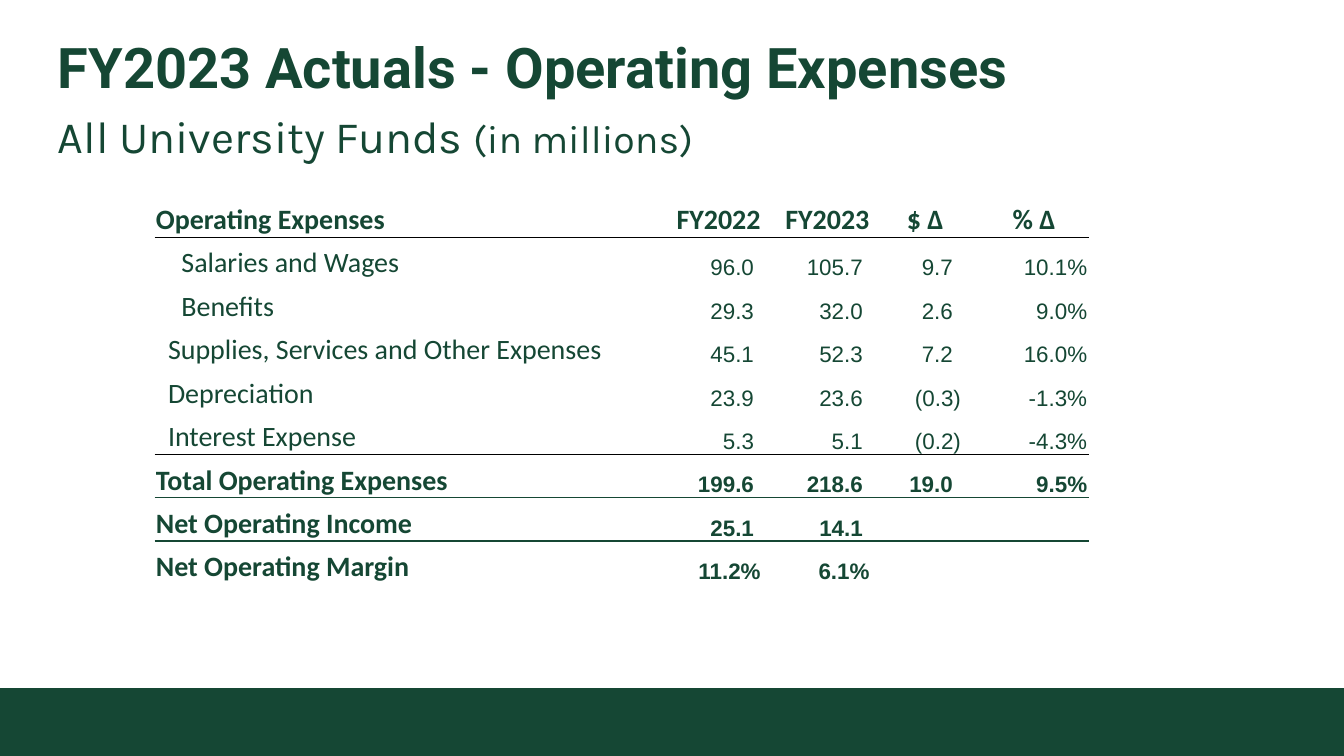
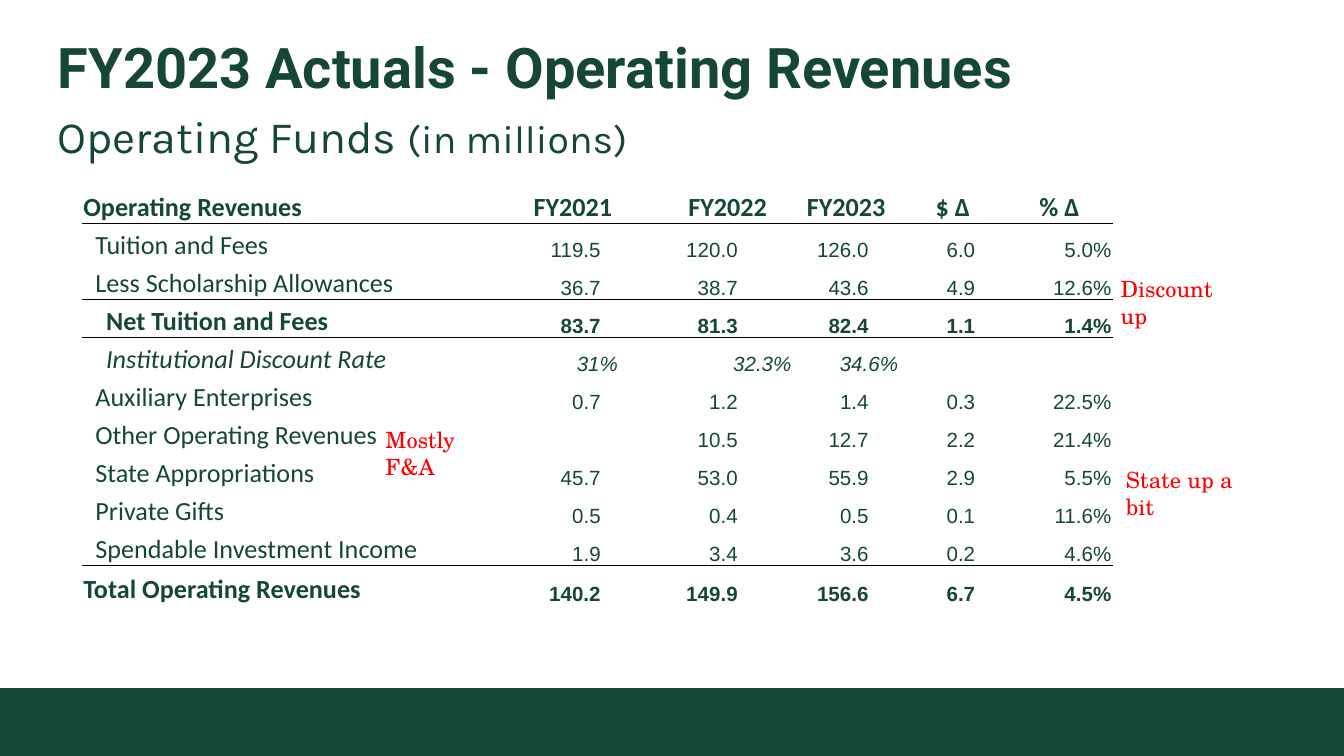
from dataclasses import dataclass

from lxml.etree import SubElement
from pptx import Presentation
from pptx.dml.color import RGBColor
from pptx.enum.shapes import MSO_SHAPE as Shape
from pptx.enum.text import MSO_ANCHOR as Anchor, MSO_AUTO_SIZE as AutoSize, PP_ALIGN as Align
from pptx.oxml.ns import qn
from pptx.util import Inches, Pt


@dataclass(frozen=True)
class Theme:
    green: str = "154734"
    black: str = "000000"
    red: str = "FF0000"
    title_font: str = "Roboto"
    subtitle_font: str = "Karla"
    label_font: str = "Calibri"
    value_font: str = "Arial"
    note_font: str = "TeX Gyre Schola"
    title_size: int = 30
    subtitle_size: int = 24
    unit_size: int = 21
    note_size: int = 12
    cell_pad: float = 0.01
    bracket: float = 0.06
    no_table_style: str = "{2D5ABB26-0587-4C30-8999-92F81FD0307C}"


theme = Theme()
THIN = (theme.black, 0.5)
GREEN = (theme.green, 1)
CHANGE_WIDTH = 2.38 / 3

# columns: width, heading alignment, space to the right of a plain number
# rows: label, label indent, style, values
# rules: row number -> line below that row
statements = [
    dict(
        title="FY2023 Actuals - Operating Expenses",
        funds="All University Funds ",
        at=(1.15, 1.44),
        sizes=(15, 12),
        headings=["Operating Expenses", "FY2022", "FY2023", "$ ∆", "% ∆"],
        columns=[(3.71, Align.LEFT, 0), (0.81, Align.RIGHT, 0.06), (0.81, Align.RIGHT, 0.06),
                 (0.81, Align.CENTER, 0.2), (0.81, Align.CENTER, 0.01)],
        heights=[2.91 / 9] * 9,
        rows=[
            ("Salaries and Wages", 0.2, "", ["96.0", "105.7", "9.7", "10.1%"]),
            ("Benefits", 0.2, "", ["29.3", "32.0", "2.6", "9.0%"]),
            ("Supplies, Services and Other Expenses", 0.1, "", ["45.1", "52.3", "7.2", "16.0%"]),
            ("Depreciation", 0.1, "", ["23.9", "23.6", "(0.3)", "-1.3%"]),
            ("Interest Expense", 0.1, "", ["5.3", "5.1", "(0.2)", "-4.3%"]),
            ("Total Operating Expenses", 0.01, "bold", ["199.6", "218.6", "19.0", "9.5%"]),
            ("Net Operating Income", 0.01, "bold", ["25.1", "14.1", "", ""]),
            ("Net Operating Margin", 0.01, "bold", ["11.2%", "6.1%", "", ""]),
        ],
        rules={0: THIN, 5: THIN, 6: GREEN, 7: GREEN},
        notes=[],
    ),
    dict(
        title="FY2023 Actuals - Operating Revenues",
        funds="Operating Funds ",
        at=(0.61, 1.38),
        sizes=(14, 11),
        headings=["Operating Revenues", "FY2021", "FY2022", "FY2023", "$ ∆", "% ∆"],
        columns=[(3.35, Align.LEFT, 0), (0.97, Align.LEFT, 0.46), (0.97, Align.CENTER, 0.41),
                 (CHANGE_WIDTH, Align.CENTER, 0.23), (CHANGE_WIDTH, Align.CENTER, 0.23),
                 (CHANGE_WIDTH, Align.CENTER, 0.01)],
        heights=[2.83 / 10] * 10 + [0.3],
        rows=[
            ("Tuition and Fees", 0.1, "", ["119.5", "120.0", "126.0", "6.0", "5.0%"]),
            ("Less Scholarship Allowances", 0.1, "", ["36.7", "38.7", "43.6", "4.9", "12.6%"]),
            ("Net Tuition and Fees", 0.18, "bold", ["83.7", "81.3", "82.4", "1.1", "1.4%"]),
            ("Institutional Discount Rate", 0.18, "italic", ["31%", "32.3%", "34.6%", "", ""]),
            ("Auxiliary Enterprises", 0.1, "", ["0.7", "1.2", "1.4", "0.3", "22.5%"]),
            ("Other Operating Revenues", 0.1, "", ["", "10.5", "12.7", "2.2", "21.4%"]),
            ("State Appropriations", 0.1, "", ["45.7", "53.0", "55.9", "2.9", "5.5%"]),
            ("Private Gifts", 0.1, "", ["0.5", "0.4", "0.5", "0.1", "11.6%"]),
            ("Spendable Investment Income", 0.1, "", ["1.9", "3.4", "3.6", "0.2", "4.6%"]),
            ("Total Operating Revenues", 0.01, "bold", ["140.2", "149.9", "156.6", "6.7", "4.5%"]),
        ],
        rules={0: THIN, 2: THIN, 3: THIN, 9: THIN},
        notes=[("Discount up", 8.24, 2, 1.1), ("State up a bit", 8.28, 3.42, 1.17),
               ("Mostly F&A", 2.77, 3.12, 1.1)],
    ),
]


def set_font(paragraph, name, size, color, style=""):
    font = paragraph.font
    font.name, font.size = name, Pt(size)
    font.color.rgb = RGBColor.from_string(color)
    font.bold, font.italic = style == "bold", style == "italic"


def add_text(slide, left, top, width, height, pad=None):
    """Add a wrapping text box and return its frame; pad None keeps the default insets."""
    frame = slide.shapes.add_textbox(*map(Inches, (left, top, width, height))).text_frame
    frame.word_wrap = True
    if pad is not None:
        frame.margin_left = frame.margin_right = frame.margin_top = frame.margin_bottom = Inches(pad)
    return frame


deck = Presentation()
deck.slide_width, deck.slide_height = Inches(10), Inches(10 * 9 / 16)

for statement in statements:
    slide = deck.slides.add_slide(deck.slide_layouts[6])

    band = slide.shapes.add_shape(Shape.RECTANGLE, *map(Inches, (-0.04, 5.12, 10.04, 0.51)))
    band.shadow.inherit = False
    band.fill.solid()
    band.fill.fore_color.rgb = RGBColor.from_string(theme.green)
    band.line.fill.background()

    title = add_text(slide, 0.43, 0.3, 9.14, 0.44, pad=0).paragraphs[0]
    title.text = statement["title"]
    title.line_spacing = 0.9
    set_font(title, theme.title_font, theme.title_size, theme.green, "bold")

    subtitle = add_text(slide, 0.43, 0.81, 9.14, 0.34, pad=0).paragraphs[0]
    subtitle.space_before = subtitle.space_after = Pt(3)
    set_font(subtitle, theme.subtitle_font, theme.subtitle_size, theme.green)
    subtitle.add_run().text = statement["funds"]
    unit = subtitle.add_run()
    unit.text = "(in millions)"
    unit.font.size = Pt(theme.unit_size)

    columns, heights, rules = statement["columns"], statement["heights"], statement["rules"]
    label_size, value_size = statement["sizes"]
    width = sum(column[0] for column in columns)
    table_frame = slide.shapes.add_table(
        len(heights), len(columns), *map(Inches, (*statement["at"], width, sum(heights))))
    table_frame.element.find(".//" + qn("a:tableStyleId")).text = theme.no_table_style
    table = table_frame.table
    table.first_row = table.horz_banding = False
    for column, (column_width, _, _) in zip(table.columns, columns):
        column.width = Inches(column_width)
    for row, height in zip(table.rows, heights):
        row.height = Inches(height)

    lines = [(statement["headings"][0], theme.cell_pad, "bold", statement["headings"][1:])]
    lines += statement["rows"]
    for r, (label, indent, style, values) in enumerate(lines):
        for c, text in enumerate([label, *values]):
            _, heading_align, number_gap = columns[c]
            cell = table.cell(r, c)
            cell.vertical_anchor = Anchor.BOTTOM
            left = right = theme.cell_pad
            font, size = theme.label_font, label_size
            if c == 0:
                align, left = Align.LEFT, indent
            elif r == 0:
                align = heading_align
            else:
                align, font, size = Align.RIGHT, theme.value_font, value_size
                if style == "italic" and c == 1:
                    align = Align.CENTER
                elif not text.endswith("%"):
                    # a closing bracket hangs to the right of the digits
                    right = number_gap - (theme.bracket if text.endswith(")") else 0)
            cell.margin_left, cell.margin_right = Inches(left), Inches(right)
            cell.margin_top, cell.margin_bottom = Inches(theme.cell_pad), 0
            paragraph = cell.text_frame.paragraphs[0]
            if text:
                paragraph.text = text
            paragraph.alignment = align
            set_font(paragraph, font, size, theme.green, style)

            cell_props = cell._tc.get_or_add_tcPr()
            for edge, rule in (("a:lnT", rules.get(r - 1)), ("a:lnB", rules.get(r))):
                border = SubElement(cell_props, qn(edge))
                if rule:
                    color, weight = rule
                    border.set("w", str(Pt(weight)))
                    fill = SubElement(border, qn("a:solidFill"))
                    SubElement(fill, qn("a:srgbClr"), val=color)
                else:
                    SubElement(border, qn("a:noFill"))
            cell.fill.background()

    for remark, left, top, note_width in statement["notes"]:
        note = add_text(slide, left, top, note_width, 0.3)
        note.auto_size = AutoSize.SHAPE_TO_FIT_TEXT
        note.text = remark
        set_font(note.paragraphs[0], theme.note_font, theme.note_size, theme.red)

deck.save("out.pptx")
